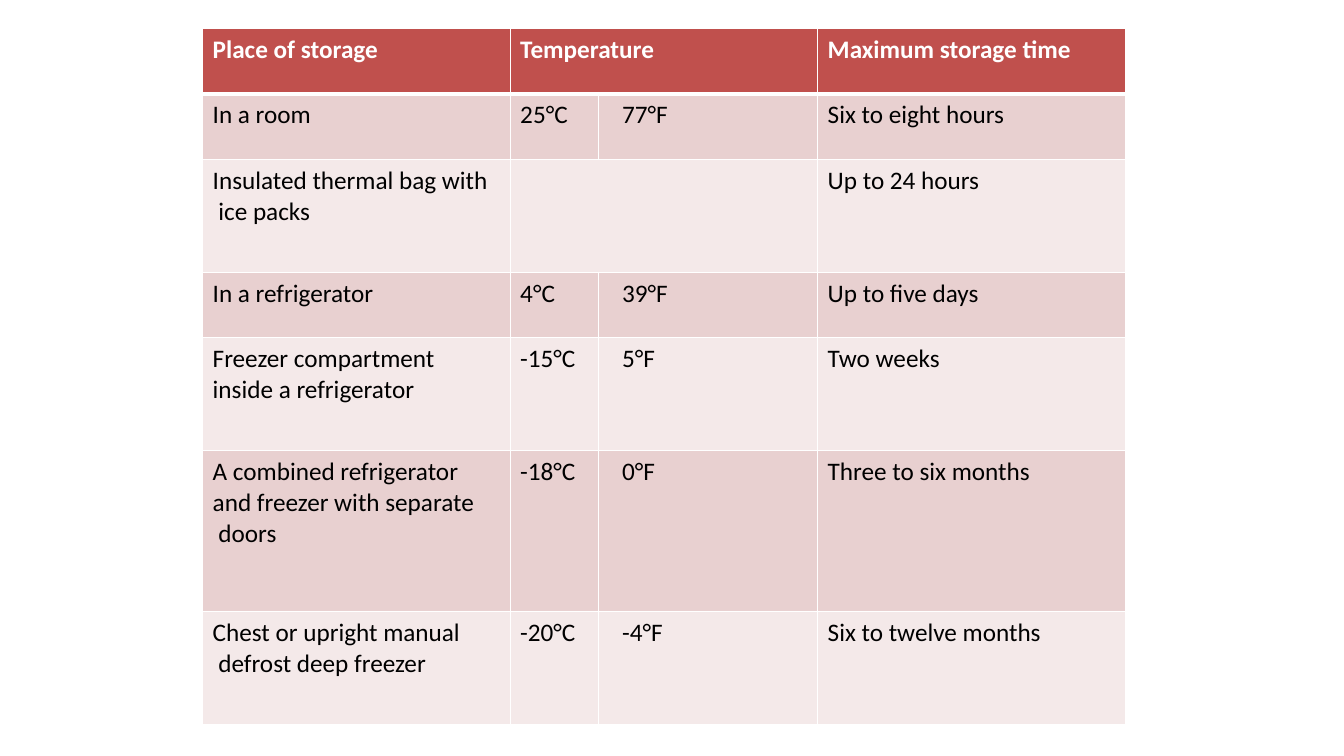
from lxml.etree import SubElement as Sub
from pptx import Presentation as Deck
from pptx.dml.color import RGBColor as Rgb
from pptx.oxml.ns import qn
from pptx.util import Inches as In, Pt

HUES = {"head": "C0504D", "dark": "E8D0D0", "pale": "F4E9E9",
        "line": "FFFFFF", "text": "000000"}
WIDE, HIGH = 13.33, 7.5
COLS = [3.05, 0.88, 2.17, 3.05]
ROWS = [0.65, 0.65, 1.12, 0.65, 1.12, 1.6, 1.12]
DATA = [
    ["Place of storage", "Temperature", "", "Maximum storage time"],
    ["In a room", "25°C", "77°F", "Six to eight hours"],
    ["Insulated thermal bag with\v ice packs", "", "", "Up to 24 hours"],
    ["In a refrigerator", "4°C", "39°F", "Up to five days"],
    ["Freezer compartment\ninside a refrigerator", "-15°C", "5°F", "Two weeks"],
    ["A combined refrigerator\vand freezer with separate\v doors",
     "-18°C", "0°F", "Three to six months"],
    ["Chest or upright manual\v defrost deep freezer",
     "-20°C", "-4°F", "Six to twelve months"],
]


def hue(name):
    return Rgb.from_string(HUES[name])


def edge(cell, row):
    props = cell._tc.get_or_add_tcPr()
    thick = {"lnT": 3 if row == 1 else 1, "lnB": 3 if row == 0 else 1}
    for side in ("lnL", "lnR", "lnT", "lnB"):
        line = Sub(props, qn("a:" + side), w=str(Pt(thick.get(side, 1))))
        fill = Sub(line, qn("a:solidFill"))
        Sub(fill, qn("a:srgbClr"), val=HUES["line"])


def paint(cell, text, row, col):
    edge(cell, row)
    cell.fill.solid()
    cell.fill.fore_color.rgb = hue("head" if row == 0 else
                                   "dark" if row % 2 else "pale")
    cell.margin_left = In(0.23 if col == 2 else 0.1)
    cell.margin_top = In(0.06)
    cell.margin_right = cell.margin_bottom = 0
    cell.text_frame.text = text
    for para in cell.text_frame.paragraphs:
        para.font.size = Pt(18)
        for run in para.runs:
            font = run.font
            font.name, font.size, font.bold = "Calibri", Pt(18), row == 0
            font.color.rgb = hue("line" if row == 0 else "text")


def chart(slide, left, top, width, height):
    frame = slide.shapes.add_table(len(ROWS), len(COLS), In(left), In(top),
                                   In(width), In(height))
    table = frame.table
    for col, share in zip(table.columns, COLS):
        col.width = In(width * share / sum(COLS))
    for row, share in zip(table.rows, ROWS):
        row.height = In(height * share / sum(ROWS))
    for r, line in enumerate(DATA):
        for c, text in enumerate(line):
            paint(table.cell(r, c), text, r, c)
        if not line[2]:
            table.cell(r, 1).merge(table.cell(r, 2))


def main():
    deck = Deck()
    deck.slide_width, deck.slide_height = In(WIDE), In(HIGH)
    slide = deck.slides.add_slide(deck.slide_layouts[6])
    chart(slide, 2.01, 0.28, sum(COLS), sum(ROWS))
    deck.save("out.pptx")


if __name__ == "__main__":
    main()
